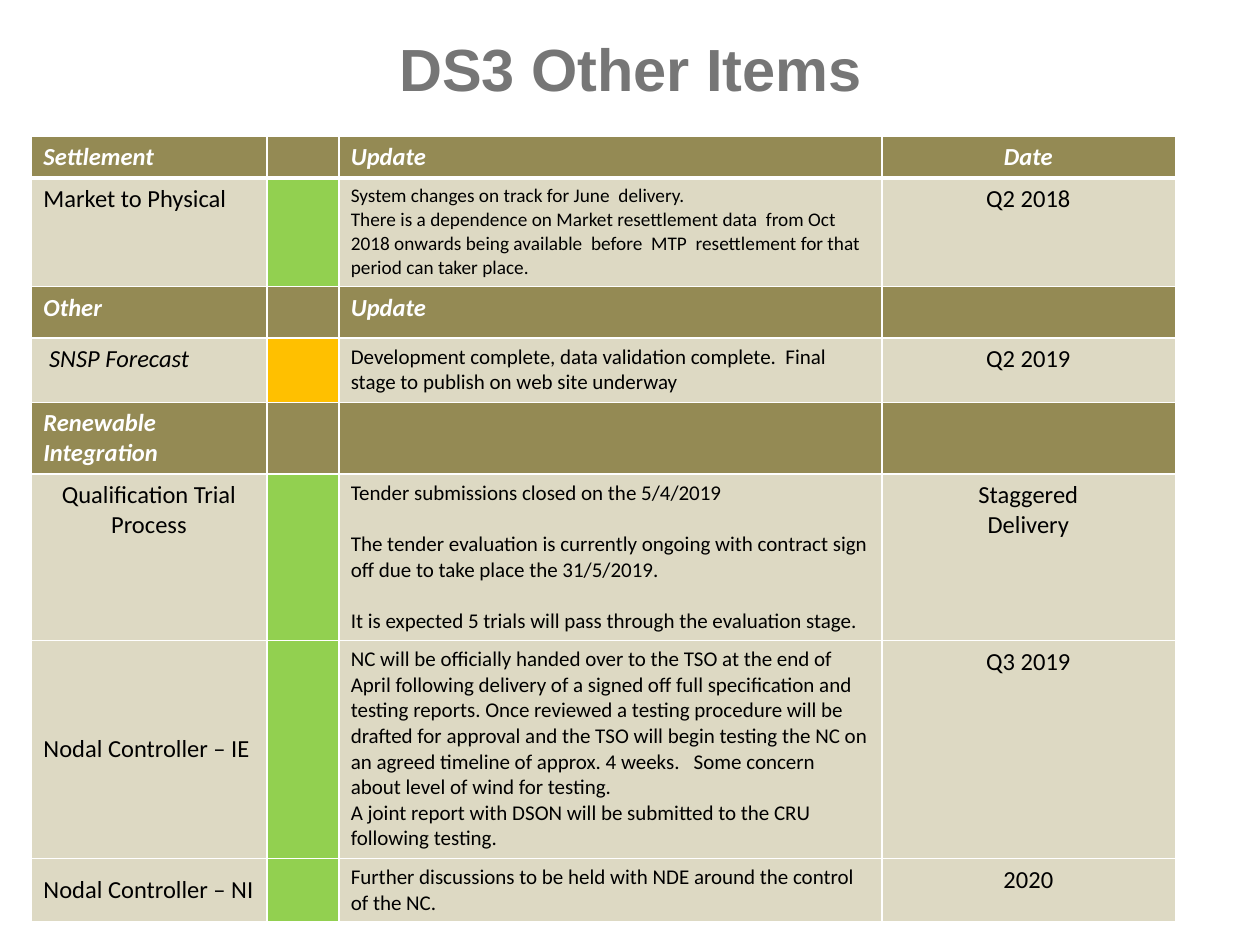
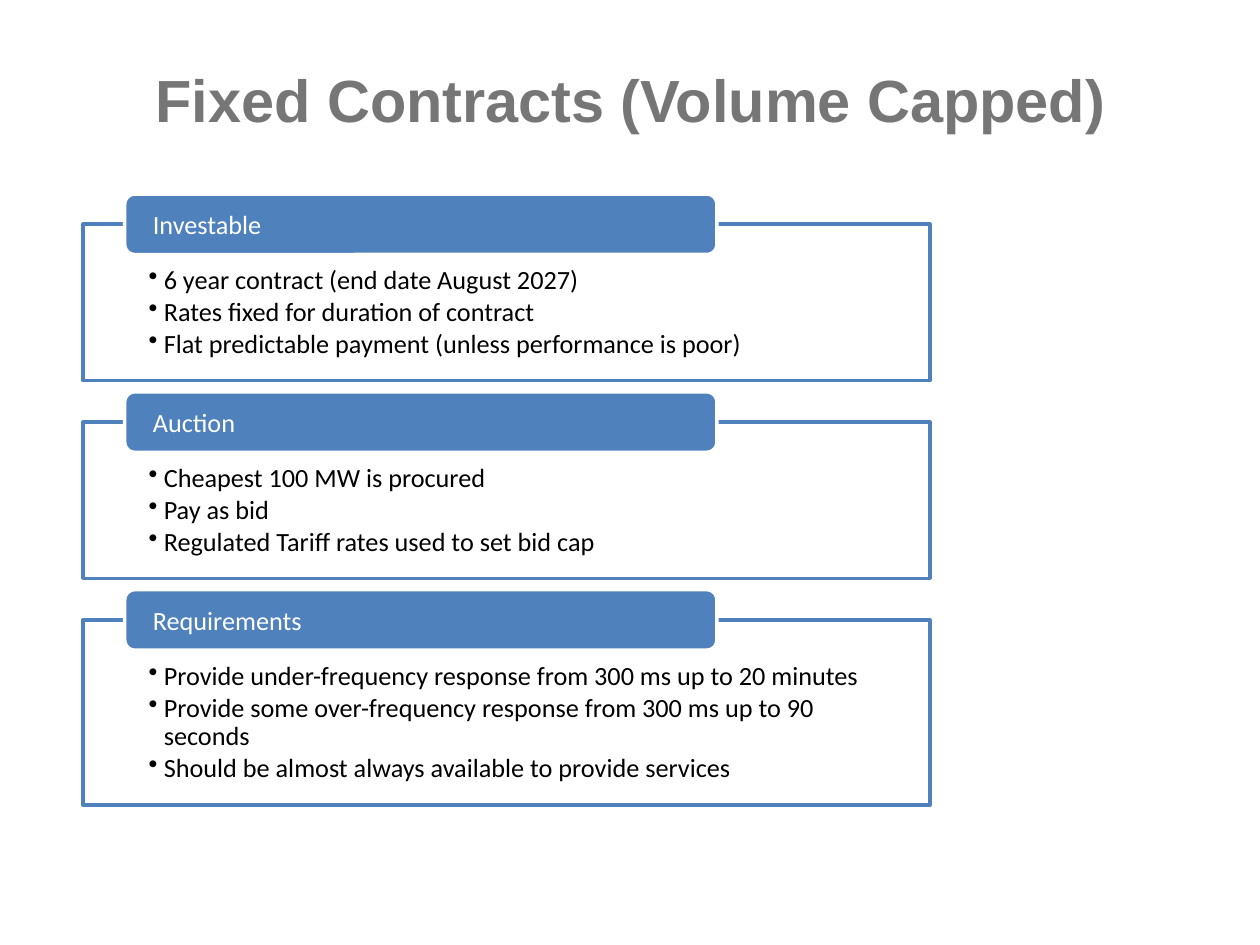
import pptx
import pptx.util
import pptx.dml.color
import pptx.enum.shapes
import pptx.enum.text
import pptx.oxml.ns
from lxml import etree

Pt = pptx.util.Pt
RGB = pptx.dml.color.RGBColor
ALIGN = pptx.enum.text.PP_ALIGN
ANCHOR = pptx.enum.text.MSO_ANCHOR
SHAPE = pptx.enum.shapes.MSO_SHAPE
qn = pptx.oxml.ns.qn

WHITE = RGB(0xFF, 0xFF, 0xFF)
BLACK = RGB(0, 0, 0)
GREY = RGB(0x76, 0x76, 0x76)
OLIVE = RGB(0x94, 0x8A, 0x54)
SAND = RGB(0xDD, 0xD9, 0xC3)
GREEN = RGB(0x92, 0xD0, 0x50)
AMBER = RGB(0xFF, 0xC0, 0x00)
BLUE = RGB(0x4F, 0x81, 0xBD)

COLUMNS, ROWS = 100, 75


class Deck:
    head_font, body_font = "Arial", "Calibri"

    def __init__(self):
        self.prs = pptx.Presentation()
        self.prs.slide_width = pptx.util.Inches(10)
        self.prs.slide_height = pptx.util.Inches(7.5)
        self.s = None

    def x(self, columns):
        return round(self.prs.slide_width * columns / COLUMNS)

    def y(self, rows):
        return round(self.prs.slide_height * rows / ROWS)

    def box(self, left, top, width, height):
        return self.x(left), self.y(top), self.x(width), self.y(height)

    def slide(self, title, top):
        self.s = self.prs.slides.add_slide(self.prs.slide_layouts[6])
        tf = self.s.shapes.add_textbox(*self.box(2.2, top, 95.7, 10.5)).text_frame
        tf.word_wrap = True
        tf.vertical_anchor = ANCHOR.MIDDLE
        self.text(tf, [title], 34, GREY, bold=True, align=ALIGN.CENTER, font=self.head_font)

    def text(self, tf, lines, size, color, bold=False, italic=False,
             align=ALIGN.LEFT, font=None, gap=0, bullet=False):
        for i, line in enumerate(lines):
            p = tf.add_paragraph() if i else tf.paragraphs[0]
            p.alignment = align
            if gap and i:
                p.space_before = Pt(gap)
            if bullet:
                indent = self.x(1.2)
                pPr = p._p.get_or_add_pPr()
                pPr.set("marL", str(indent))
                pPr.set("indent", str(-indent))
                etree.SubElement(pPr, qn("a:buChar"), char="•")
                p.line_spacing = 0.9
            r = p.add_run()
            r.text = line
            r.font.name = font or self.body_font
            r.font.size = Pt(size)
            r.font.bold, r.font.italic = bold, italic
            r.font.color.rgb = color

    def shape(self, kind, left, top, width, height, fill, line):
        sp = self.s.shapes.add_shape(kind, *self.box(left, top, width, height))
        sp.shadow.inherit = False
        sp.fill.solid()
        sp.fill.fore_color.rgb = fill
        sp.line.color.rgb = line
        sp.line.width = Pt(2)
        return sp

    def panel(self, heading, points, top, height):
        sp = self.shape(SHAPE.RECTANGLE, 6.6, top, 67.2, height, WHITE, BLUE)
        tf = sp.text_frame
        tf.vertical_anchor = ANCHOR.TOP
        tf.margin_left = tf.margin_right = self.x(5.2)
        tf.margin_top, tf.margin_bottom = self.y(3.4), self.y(1.2)
        self.text(tf, points, 15, BLACK, gap=2, bullet=True)
        tab = self.shape(SHAPE.ROUNDED_RECTANGLE, 9.9, top - 2.4, 47, 4.8, BLUE, WHITE)
        tf = tab.text_frame
        tf.vertical_anchor = ANCHOR.MIDDLE
        tf.margin_left = tf.margin_right = self.x(2)
        tf.margin_top = tf.margin_bottom = 0
        self.text(tf, [heading], 15, WHITE)

    def table(self, left, top, widths, heights):
        frame = self.s.shapes.add_table(len(heights), len(widths), *self.box(
            left, top, sum(widths), sum(heights)))
        tbl = frame.table
        for column, width in zip(tbl.columns, widths):
            column.width = self.x(width)
        for row, height in zip(tbl.rows, heights):
            row.height = self.y(height)
        return tbl

    def cell(self, cell, fill, lines=(), size=14, color=BLACK, anchor=ANCHOR.TOP,
             indent=0, bottom=1, **style):
        for side in ("lnL", "lnR", "lnT", "lnB"):
            width = bottom if side == "lnB" else 1
            ln = etree.SubElement(cell._tc.get_or_add_tcPr(), qn(f"a:{side}"), w=str(Pt(width)))
            solid = etree.SubElement(ln, qn("a:solidFill"))
            etree.SubElement(solid, qn("a:srgbClr"), val=str(WHITE))
        cell.fill.solid()
        cell.fill.fore_color.rgb = fill
        cell.vertical_anchor = anchor
        cell.margin_left = self.x(0.95 + indent)
        if lines:
            self.text(cell.text_frame, lines, size, color, **style)
        else:
            p = cell.text_frame.paragraphs[0]
            etree.SubElement(p._p, qn("a:endParaRPr"), sz=str(size * 100))

    def band(self, row, labels, bottom=1):
        for i, label in enumerate(labels):
            self.cell(row.cells[i], OLIVE, [label] if label else (), color=WHITE,
                      bold=True, italic=True, bottom=bottom,
                      align=ALIGN.CENTER if i == 3 else ALIGN.LEFT)

    def item(self, row, label, status, update, date, size=12, gap=0, **label_style):
        name, light, detail, when = row.cells
        self.cell(name, SAND, [label], **label_style)
        self.cell(light, status)
        self.cell(detail, SAND, update, size=size, gap=gap)
        self.cell(when, SAND, date, align=ALIGN.CENTER)


def other_items(deck):
    deck.slide("DS3 Other Items", 0.1)
    tbl = deck.table(2.5, 10.8, [18.7, 5.7, 43.1, 23.3],
                     [3.3, 8.6, 4.1, 5.1, 5.7, 13.2, 17.3, 5])
    rows = list(tbl.rows)
    deck.band(rows[0], ["Settlement", "", "Update", "Date"], bottom=3)
    deck.item(rows[1], "Market to Physical", GREEN, [
        "System changes on track for June  delivery.",
        "There is a dependence on Market resettlement data  from Oct 2018 onwards being "
        "available  before  MTP  resettlement for that period can taker place."],
        ["Q2 2018"], size=11)
    deck.band(rows[2], ["Other", "", "Update", ""])
    deck.item(rows[3], "SNSP Forecast", AMBER, [
        "Development complete, data validation complete.  Final stage to publish on "
        "web site underway"], ["Q2 2019"], italic=True, indent=0.45)
    deck.band(rows[4], ["Renewable Integration", "", "", ""])
    deck.item(rows[5], "Qualification Trial Process", GREEN, [
        "Tender submissions closed on the 5/4/2019",
        "The tender evaluation is currently ongoing with contract sign off due to take "
        "place the 31/5/2019.",
        "It is expected 5 trials will pass through the evaluation stage."],
        ["Staggered", "Delivery"], gap=14.6, align=ALIGN.CENTER)
    deck.item(rows[6], "Nodal Controller – IE", GREEN, [
        "NC will be officially handed over to the TSO at the end of April following "
        "delivery of a signed off full specification and testing reports. Once reviewed "
        "a testing procedure will be drafted for approval and the TSO will begin testing "
        "the NC on an agreed timeline of approx. 4 weeks.   Some concern about level of "
        "wind for testing.",
        "A joint report with DSON will be submitted to the CRU following testing."],
        ["Q3 2019"], anchor=ANCHOR.MIDDLE)
    deck.item(rows[7], "Nodal Controller – NI", GREEN, [
        "Further discussions to be held with NDE around the control of the NC."],
        ["2020"], anchor=ANCHOR.MIDDLE)


def fixed_contracts(deck):
    deck.slide("Fixed Contracts (Volume Capped)", 2.6)
    panels = [
        ("Investable", 12.4, ["6 year contract (end date August 2027)",
                              "Rates fixed for duration of contract",
                              "Flat predictable payment (unless performance is poor)"]),
        ("Auction", 12.4, ["Cheapest 100 MW is procured",
                           "Pay as bid",
                           "Regulated Tariff rates used to set bid cap"]),
        ("Requirements", 14.7, [
            "Provide under-frequency response from 300 ms up to 20 minutes",
            "Provide some over-frequency response from 300 ms up to 90 seconds",
            "Should be almost always available to provide services"]),
    ]
    for i, (heading, height, points) in enumerate(panels):
        deck.panel(heading, points, 17.8 + 15.7 * i, height)


def main():
    deck = Deck()
    other_items(deck)
    fixed_contracts(deck)
    deck.prs.save("out.pptx")


if __name__ == "__main__":
    main()
